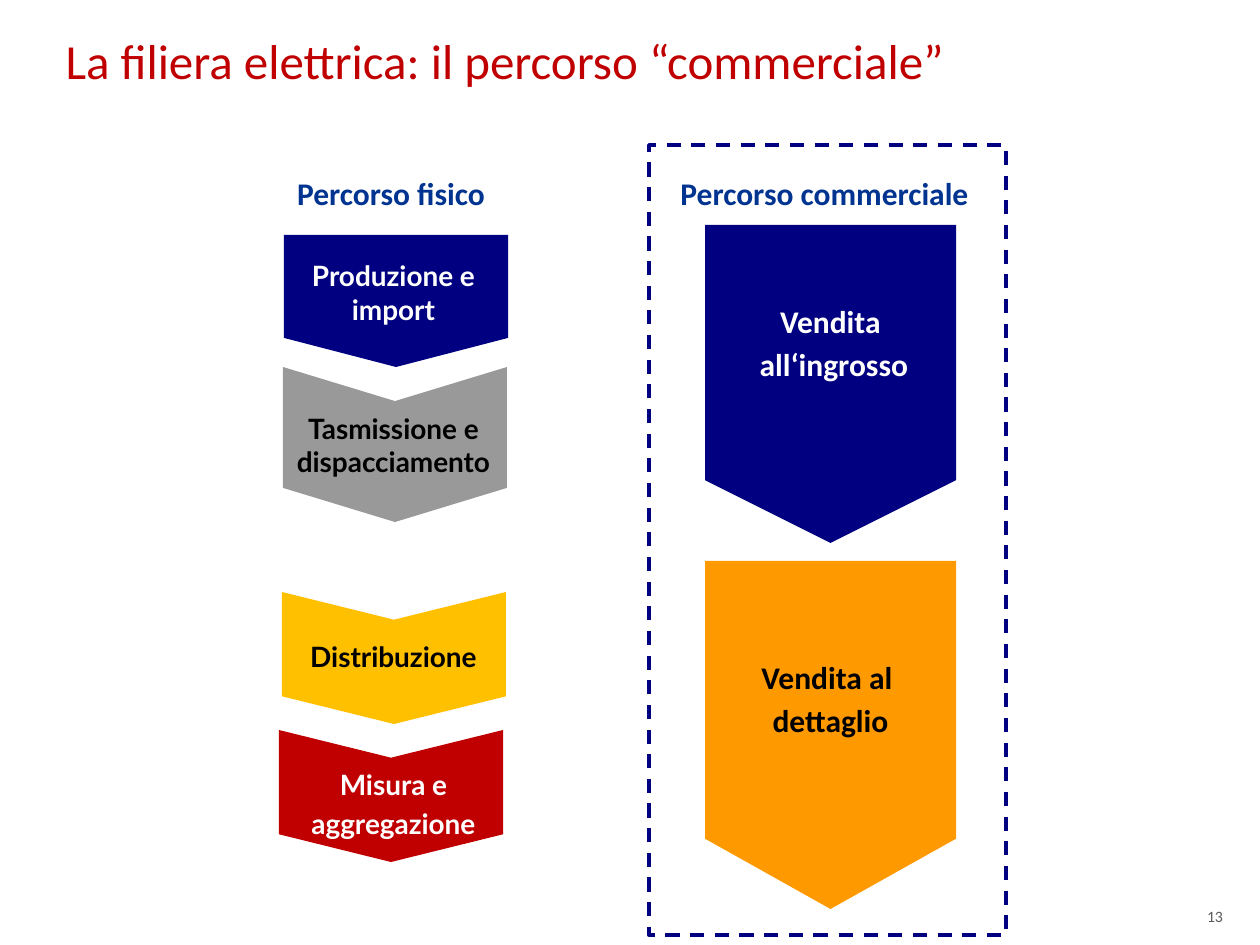
from pptx import Presentation
from pptx.dml.color import RGBColor
from pptx.enum.dml import MSO_LINE
from pptx.enum.shapes import MSO_SHAPE
from pptx.enum.text import MSO_ANCHOR, MSO_AUTO_SIZE, PP_ALIGN
from pptx.util import Emu, Inches, Pt

PX_PER_INCH = 126
COLORS = {
    "red": "C00000", "navy": "000080", "blue": "003490", "orange": "FF9900",
    "yellow": "FFC000", "grey": "999999", "dark": "595959",
    "white": "FFFFFF", "black": "000000",
}


def px(n):
    return Emu(round(n * Inches(1) / PX_PER_INCH))


def rgb(name):
    return RGBColor.from_string(COLORS[name])


class SlideBuilder:
    def __init__(self, slide):
        self.s = slide

    def add_lines(self, tf, lines, size, color, font="Calibri", bold=True,
                  align=PP_ALIGN.CENTER, spacing=None):
        tf.vertical_anchor = MSO_ANCHOR.MIDDLE
        for i, line in enumerate(lines):
            p = tf.add_paragraph() if i else tf.paragraphs[0]
            p.alignment = align
            if spacing:
                p.line_spacing = spacing
            r = p.add_run()
            r.text = line
            r.font.name, r.font.size, r.font.bold = font, Pt(size), bold
            r.font.color.rgb = rgb(color)

    def title(self, box, text):
        sp = self.s.shapes.title
        sp.left, sp.top, sp.width, sp.height = map(px, box)
        sp.text_frame.auto_size = MSO_AUTO_SIZE.NONE
        self.add_lines(sp.text_frame, [text], 28, "red", bold=False,
                       align=PP_ALIGN.LEFT)

    def text(self, box, lines, size, color, inset=(14, 8), wrap=False, **style):
        tf = self.s.shapes.add_textbox(*map(px, box)).text_frame
        tf.word_wrap = wrap
        tf.auto_size = MSO_AUTO_SIZE.SHAPE_TO_FIT_TEXT
        tf.margin_left = tf.margin_right = px(inset[0])
        tf.margin_top = tf.margin_bottom = px(inset[1])
        self.add_lines(tf, lines, size, color, **style)

    def down_arrow(self, kind, box, point, color):
        """Turn a right-pointing shape by 90 degrees so that it fills box."""
        x, y, w, h = box
        sp = self.s.shapes.add_shape(
            kind, px(x + (w - h) / 2), px(y + (h - w) / 2), px(h), px(w))
        sp.rotation = 90
        sp.adjustments[0] = point
        sp.shadow.inherit = False
        sp.fill.solid()
        sp.fill.fore_color.rgb = rgb(color)
        sp.line.fill.background()

    def dashed_frame(self, box, color):
        sp = self.s.shapes.add_shape(MSO_SHAPE.RECTANGLE, *map(px, box))
        sp.shadow.inherit = False
        sp.fill.background()
        sp.line.color.rgb = rgb(color)
        sp.line.width = Pt(2)
        sp.line.dash_style = MSO_LINE.DASH


def main():
    prs = Presentation()
    prs.slide_width, prs.slide_height = Inches(10), Inches(7.5)
    b = SlideBuilder(prs.slides.add_slide(prs.slide_layouts[5]))
    b.title((53, 23, 1071, 73), "La filiera elettrica: il percorso “commerciale”")

    for x, w, heading in [(282, 218, "Percorso fisico"),
                          (665, 319, "Percorso commerciale")]:
        b.text((x, 161, w, 58), [heading], 18, "blue", spacing=1.14)

    pentagon, chevron = MSO_SHAPE.PENTAGON, MSO_SHAPE.CHEVRON
    tight = {"inset": (0, 0)}
    loose = {"spacing": 1.14}
    physical_steps = [
        (pentagon, 284, 235, 132, 0.22, "navy",
         "Produzione e import", "white", 258, 68, tight),
        (chevron, 283, 367, 155, 0.22, "grey",
         "Tasmissione e dispacciamento", "black", 394, 102, tight),
        (chevron, 282, 592, 132, 0.21, "yellow",
         "Distribuzione", "black", 639, 34, tight),
        (chevron, 279, 730, 132, 0.21, "red",
         "Misura e aggregazione", "white", 736, 131, loose),
    ]
    for kind, x, y, h, point, fill, label, color, ty, th, style in physical_steps:
        b.down_arrow(kind, (x, y, 224, h), point, fill)
        b.text((291, ty, 205, th), [label], 16, color, wrap=True,
               font="Lato", **style)

    sales_steps = [
        (225, 318, 0.25, "navy", ["Vendita ", "all‘ingrosso"], "white",
         (745, 289, 178, 102)),
        (561, 348, 0.28, "orange", ["Vendita al ", "dettaglio"], "black",
         (746, 645, 169, 102)),
    ]
    for y, h, point, fill, lines, color, box in sales_steps:
        b.down_arrow(pentagon, (705, y, 251, h), point, fill)
        b.text(box, lines, 18, color, spacing=1.14)

    b.dashed_frame((649, 145, 357, 790), "navy")
    b.text((960, 900, 277, 32), ["13"], 9, "dark", wrap=True, bold=False,
           align=PP_ALIGN.RIGHT)
    prs.save("out.pptx")


if __name__ == "__main__":
    main()
